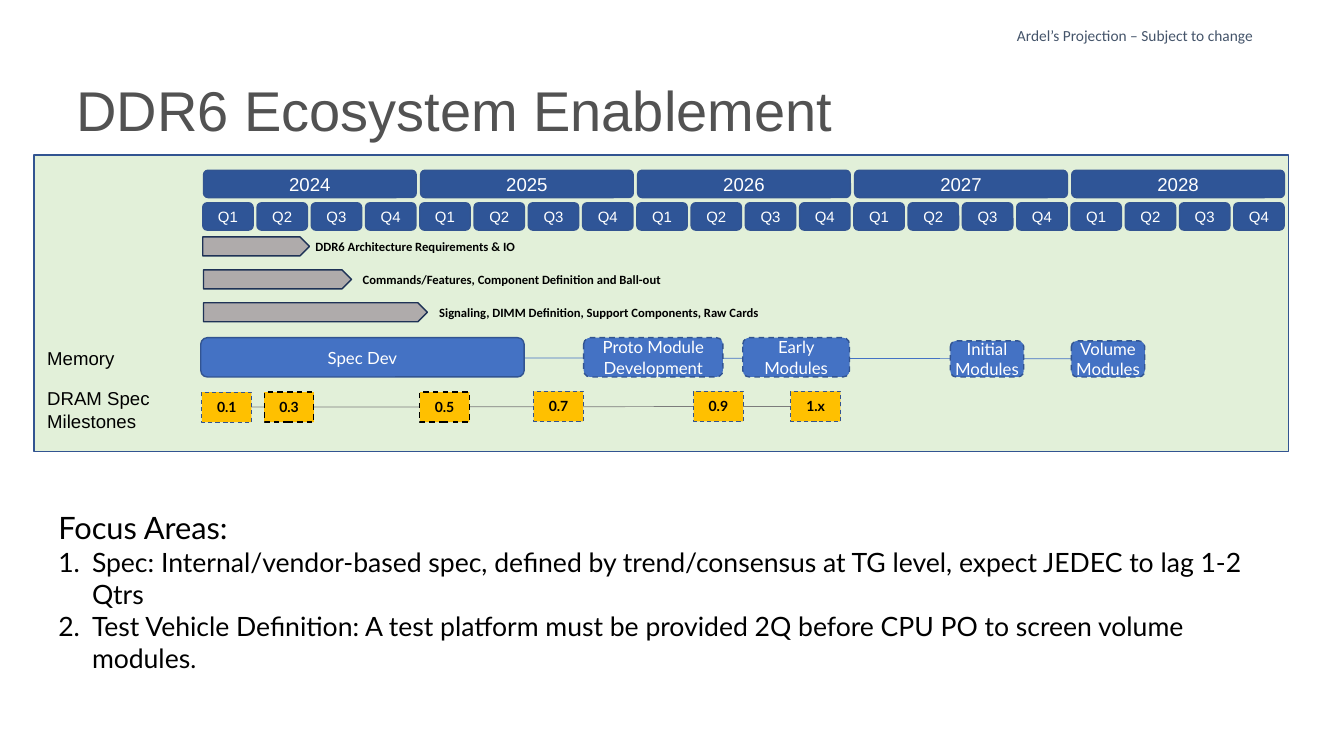
import pptx
import pptx.dml.color
import pptx.enum.dml
import pptx.enum.shapes
import pptx.enum.text
import pptx.oxml
import pptx.oxml.ns
import pptx.util

Cm = pptx.util.Cm
Pt = pptx.util.Pt
SHAPES = pptx.enum.shapes.MSO_SHAPE
ALIGN = pptx.enum.text.PP_ALIGN
ANCHOR = pptx.enum.text.MSO_ANCHOR

NAVY, EDGE, BLUE = "2F5597", "325491", "4472C4"
BLACK, WHITE = "000000", "FFFFFF"


def color(value):
    return pptx.dml.color.RGBColor.from_string(value)


class RoadmapSlide:
    def __init__(self, presentation):
        self.slide = presentation.slides.add_slide(presentation.slide_layouts[6])
        self.shapes = self.slide.shapes

    def add_run(self, paragraph, text, size, font, ink, bold=False):
        run = paragraph.add_run()
        run.text = text
        run.font.size = Pt(size)
        run.font.name = font
        run.font.bold = bold
        run.font.color.rgb = color(ink)

    def set_insets(self, frame):
        frame.margin_left = frame.margin_right = 0
        frame.margin_top = frame.margin_bottom = 0

    def add_box(self, kind, left, top, width, height, fill, edge=EDGE,
                weight=1, dashed=False, text="", size=12, font="Lato",
                ink=WHITE, bold=False, tight=False):
        shape = self.shapes.add_shape(kind, Cm(left), Cm(top), Cm(width), Cm(height))
        shape.shadow.inherit = False
        shape.fill.solid()
        shape.fill.fore_color.rgb = color(fill)
        shape.line.color.rgb = color(edge)
        shape.line.width = Pt(weight)
        if dashed:
            shape.line.dash_style = pptx.enum.dml.MSO_LINE.DASH
        if text:
            frame = shape.text_frame
            frame.word_wrap = True
            frame.vertical_anchor = ANCHOR.MIDDLE
            if tight:
                self.set_insets(frame)
            frame.paragraphs[0].alignment = ALIGN.CENTER
            self.add_run(frame.paragraphs[0], text, size, font, ink, bold)
        return shape

    def add_text(self, left, top, width, height, lines, size, font,
                 ink=BLACK, bold=False, wrap=False, tight=False,
                 anchor=ANCHOR.TOP):
        box = self.shapes.add_textbox(Cm(left), Cm(top), Cm(width), Cm(height))
        frame = box.text_frame
        frame.word_wrap = wrap
        frame.vertical_anchor = anchor
        if not wrap:
            frame.auto_size = pptx.enum.text.MSO_AUTO_SIZE.SHAPE_TO_FIT_TEXT
        if tight:
            self.set_insets(frame)
        for index, line in enumerate(lines):
            paragraph = frame.paragraphs[0] if index == 0 else frame.add_paragraph()
            self.add_run(paragraph, line, size, font, ink, bold)
        return frame

    def add_numbered(self, frame, runs):
        paragraph = frame.add_paragraph()
        properties = paragraph._p.get_or_add_pPr()
        properties.set("marL", str(Cm(0.85)))
        properties.set("indent", str(-Cm(0.85)))
        properties.append(pptx.oxml.parse_xml(
            f'<a:buAutoNum {pptx.oxml.ns.nsdecls("a")} type="arabicPeriod"/>'))
        for text, size in runs:
            self.add_run(paragraph, text, size, "Lato", BLACK)

    def add_line(self, ink):
        line = self.shapes.add_connector(
            pptx.enum.shapes.MSO_CONNECTOR.STRAIGHT, 0, 0, 0, 0)
        line.line.color.rgb = color(ink)
        line.line.width = Pt(0.5)
        line._element.spPr.append(pptx.oxml.parse_xml(
            f'<a:effectLst {pptx.oxml.ns.nsdecls("a")}/>'))
        return line

    def join(self, line, boxes):
        line.begin_connect(boxes[0], 1)
        line.end_connect(boxes[-1], 3)


def main():
    presentation = pptx.Presentation()
    presentation.slide_width = Cm(33.87)
    presentation.slide_height = Cm(19.05)
    roadmap = RoadmapSlide(presentation)

    # Title and timeline panel
    roadmap.add_text(1.68, 1.14, 30.48, 3.23, ["DDR6 Ecosystem Enablement"], 40,
                     "Arial", "525252", wrap=True, anchor=ANCHOR.MIDDLE)
    roadmap.add_box(SHAPES.RECTANGLE, 0.86, 3.91, 31.62, 7.47, "E2F0D9")

    # Calendar: years above their quarters
    year_pitch = 5.47
    for index in range(5):
        year_left = 5.11 + index * year_pitch
        for quarter in range(4):
            roadmap.add_box(SHAPES.ROUNDED_RECTANGLE,
                            year_left + quarter * year_pitch / 4, 5.11, 1.27, 0.69,
                            NAVY, text=f"Q{quarter + 1}", size=10.7, font="Arial")
        roadmap.add_box(SHAPES.ROUNDED_RECTANGLE, year_left + 0.02, 4.29, 5.36, 0.69,
                        NAVY, text=str(2024 + index), size=13.3, font="Arial")

    # Row labels
    roadmap.add_text(0.94, 8.61, 2.29, 0.84, ["Memory"], 13.3, "Arial")
    roadmap.add_text(0.94, 9.63, 3.23, 1.4, ["DRAM Spec", "Milestones"], 13.3, "Arial")

    # Memory phases
    phases = [
        ("Spec Dev", 5.06, 8.51, 8.15, 0.99),
        ("Proto Module Development", 14.71, 8.51, 3.51, 0.99),
        ("Early Modules", 18.72, 8.51, 2.69, 0.99),
        ("Initial Modules", 23.95, 8.59, 1.85, 0.91),
        ("Volume Modules", 27, 8.59, 1.85, 0.91),
    ]
    memory_line = roadmap.add_line(BLUE)
    phase_boxes = [
        roadmap.add_box(SHAPES.ROUNDED_RECTANGLE, left, top, width, height, BLUE,
                        dashed=name != "Spec Dev", text=name, tight=True)
        for name, left, top, width, height in phases
    ]
    roadmap.join(memory_line, phase_boxes)

    # DRAM spec milestones
    milestones = [
        ("0.1", 5.09, 9.88, EDGE, 0.75), ("0.3", 6.66, 9.88, BLACK, 1),
        ("0.5", 10.58, 9.88, BLACK, 1), ("0.7", 13.45, 9.86, EDGE, 0.75),
        ("0.9", 17.48, 9.86, EDGE, 0.75), ("1.x", 19.93, 9.86, EDGE, 0.75),
    ]
    milestone_line = roadmap.add_line("7C7C7C")
    milestone_boxes = [
        roadmap.add_box(SHAPES.RECTANGLE, left, top, 1.25, 0.76, "FFC000", edge,
                        weight, True, version, 10, ink=BLACK, bold=True)
        for version, left, top, edge, weight in milestones
    ]
    roadmap.join(milestone_line, milestone_boxes)

    # Definition work: arrow bars with captions
    work = [
        ("DDR6 Architecture Requirements & IO", 5.11, 5.97, 2.69, 7.7, 5.92),
        ("Commands/Features, Component Definition and Ball-out",
         5.13, 6.8, 3.73, 8.89, 8.64),
        ("Signaling, DIMM Definition, Support Components, Raw Cards",
         5.13, 7.63, 5.64, 10.82, 9.09),
    ]
    for caption, left, top, width, caption_left, caption_width in work:
        roadmap.add_box(SHAPES.PENTAGON, left, top, width, 0.48, "AFABAB", "1E3256")
        roadmap.add_text(caption_left, top - 0.07, caption_width, 0.64, [caption],
                         9, "Calibri", bold=True)

    # Focus areas
    focus = roadmap.add_text(1.47, 12.83, 30.68, 3, ["Focus Areas:"], 22, "Lato",
                             wrap=True, tight=True)
    roadmap.add_numbered(focus, [(
        "Spec: Internal/vendor-based spec, defined by trend/consensus at TG level, "
        "expect JEDEC to lag 1-2 Qtrs", 19)])
    roadmap.add_numbered(focus, [(
        "Test Vehicle Definition: A test platform must be provided 2Q before CPU PO "
        "to screen volume modules", 19), (".", 18)])

    # Disclaimer
    roadmap.add_text(25.63, 0.66, 6.53, 0.81,
                     ["Ardel’s Projection – Subject to change"], 11, "Calibri",
                     "44546A", wrap=True, tight=True)

    presentation.save("out.pptx")


if __name__ == "__main__":
    main()
